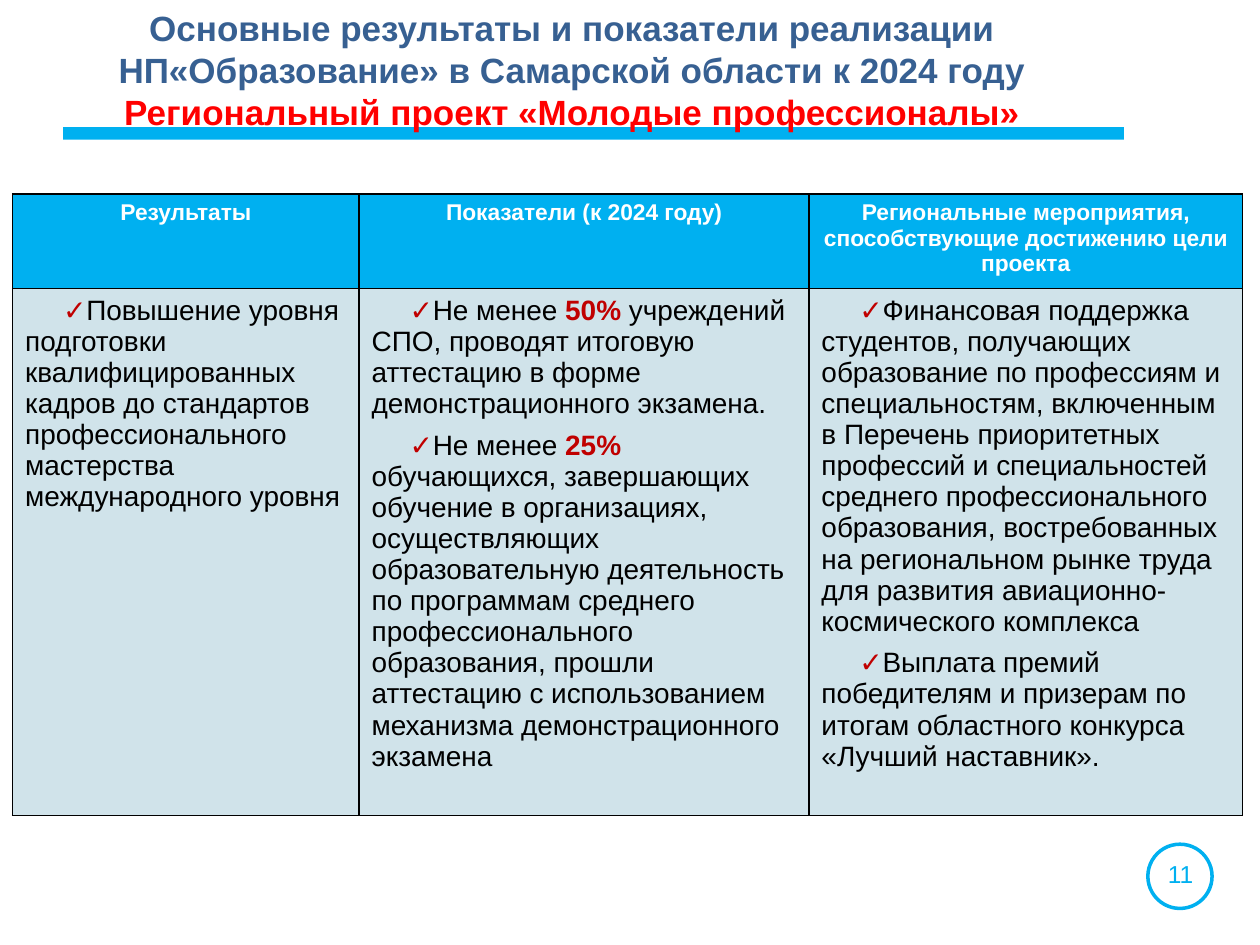
from dataclasses import dataclass

import pptx
import pptx.dml.color
import pptx.enum.shapes
import pptx.enum.text
import pptx.oxml.ns
import pptx.util
from lxml import etree

Inches = pptx.util.Inches
Pt = pptx.util.Pt
CENTER = pptx.enum.text.PP_ALIGN.CENTER
FONT = "Arial"
COLORS = {
    "sky": "00B0F0",
    "navy": "376092",
    "red": "FF0000",
    "crimson": "C00000",
    "pale": "D0E3EA",
    "white": "FFFFFF",
    "black": "000000",
}


@dataclass
class Span:
    text: str
    size: int = 16
    color: str = "black"
    bold: bool = False


@dataclass
class Column:
    width: float
    heading: str
    items: list[list[Span]]


def rgb(name: str) -> pptx.dml.color.RGBColor:
    return pptx.dml.color.RGBColor.from_string(COLORS[name])


def add_spans(paragraph, spans: list[Span]) -> None:
    for span in spans:
        run = paragraph.add_run()
        run.text = span.text
        run.font.name = FONT
        run.font.size = Pt(span.size)
        run.font.bold = span.bold
        run.font.color.rgb = rgb(span.color)


def add_child(parent, tag: str, **attributes: str):
    return etree.SubElement(parent, pptx.oxml.ns.qn(tag), **attributes)


def add_check_bullet(paragraph) -> None:
    properties = paragraph._p.get_or_add_pPr()
    properties.set("marL", "0")
    properties.set("indent", str(Inches(0.3)))
    bullet_color = add_child(properties, "a:buClr")
    add_child(bullet_color, "a:srgbClr", val=COLORS["crimson"])
    add_child(properties, "a:buFont", typeface=FONT)
    add_child(properties, "a:buChar", char="✓")


def style_cell(cell, fill: str) -> None:
    properties = cell._tc.get_or_add_tcPr()
    for side in ("a:lnL", "a:lnR", "a:lnT", "a:lnB"):
        border = add_child(properties, side, w=str(Pt(1)))
        border_fill = add_child(border, "a:solidFill")
        add_child(border_fill, "a:srgbClr", val=COLORS["black"])
    cell.fill.solid()
    cell.fill.fore_color.rgb = rgb(fill)


def add_results_table(slide, columns: list[Column]) -> None:
    row_heights = (0.75, 4.18)
    results = slide.shapes.add_table(
        len(row_heights), len(columns), Inches(0.1), Inches(1.54),
        Inches(sum(column.width for column in columns)), Inches(sum(row_heights)),
    ).table
    results.first_row = False
    results.horz_banding = False
    for row, height in zip(results.rows, row_heights):
        row.height = Inches(height)
    for index, column in enumerate(columns):
        results.columns[index].width = Inches(column.width)
        heading, body = results.cell(0, index), results.cell(1, index)
        style_cell(heading, "sky")
        style_cell(body, "pale")
        heading_line = heading.text_frame.paragraphs[0]
        heading_line.alignment = CENTER
        add_spans(heading_line, [Span(column.heading, 13, "white", True)])
        for number, spans in enumerate(column.items):
            frame = body.text_frame
            item = frame.add_paragraph() if number else frame.paragraphs[0]
            add_check_bullet(item)
            item.space_before = Pt(6 if number else 0)
            add_spans(item, spans)


def add_title(slide) -> None:
    title = slide.shapes.title
    title.left, title.top = Inches(0), Inches(0)
    title.width, title.height = Inches(9.08), Inches(1.07)
    frame = title.text_frame
    frame.word_wrap = True
    frame.auto_size = pptx.enum.text.MSO_AUTO_SIZE.NONE
    frame.vertical_anchor = pptx.enum.text.MSO_ANCHOR.TOP
    lines = [
        Span("Основные результаты и показатели реализации НП«Образование» "
             "в Самарской области к 2024 году", 20, "navy", True),
        Span("Региональный проект «Молодые профессионалы»", 20, "red", True),
    ]
    for number, line in enumerate(lines):
        paragraph = frame.add_paragraph() if number else frame.paragraphs[0]
        paragraph.alignment = CENTER
        add_spans(paragraph, [line])
    slide.shapes._spTree.append(title._element)


def add_title_bar(slide) -> None:
    bar = slide.shapes.add_shape(
        pptx.enum.shapes.MSO_SHAPE.RECTANGLE,
        Inches(0.5), Inches(1.01), Inches(8.42), Inches(0.1),
    )
    bar.shadow.inherit = False
    bar.fill.solid()
    bar.fill.fore_color.rgb = rgb("sky")
    bar.line.fill.background()


def add_page_number(slide) -> None:
    ring = slide.shapes.add_shape(
        pptx.enum.shapes.MSO_SHAPE.OVAL,
        Inches(9.11), Inches(6.7), Inches(0.51), Inches(0.51),
    )
    ring.shadow.inherit = False
    ring.fill.background()
    ring.line.color.rgb = rgb("sky")
    ring.line.width = Pt(2)
    page = slide.shapes.add_textbox(
        Inches(9.08), Inches(6.77), Inches(0.58), Inches(0.34)
    )
    page.text_frame.word_wrap = True
    paragraph = page.text_frame.paragraphs[0]
    paragraph.alignment = CENTER
    add_spans(paragraph, [Span("11", 14, "sky")])


COLUMNS = [
    Column(2.75, "Результаты", [
        [Span("Повышение уровня подготовки квалифицированных кадров до стандартов "
              "профессионального мастерства международного уровня")],
    ]),
    Column(3.57, "Показатели (к 2024 году)", [
        [Span("Не менее "), Span("50%", color="crimson", bold=True),
         Span(" учреждений СПО, проводят итоговую аттестацию в форме "
              "демонстрационного экзамена.")],
        [Span("Не менее"), Span(" 25% ", color="crimson", bold=True),
         Span("обучающихся, завершающих обучение в организациях, осуществляющих "
              "образовательную деятельность по программам среднего "
              "профессионального образования, прошли аттестацию с использованием "
              "механизма демонстрационного экзамена")],
    ]),
    Column(3.44, "Региональные мероприятия, способствующие достижению цели проекта", [
        [Span("Финансовая поддержка студентов, получающих образование по профессиям "
              "и специальностям, включенным в Перечень приоритетных профессий и "
              "специальностей среднего профессионального образования, "
              "востребованных на региональном рынке труда для развития "
              "авиационно-космического комплекса")],
        [Span("Выплата премий победителям и призерам по итогам областного конкурса "
              "«Лучший наставник».")],
    ]),
]


def main() -> None:
    presentation = pptx.Presentation()
    presentation.slide_width = Inches(10)
    presentation.slide_height = Inches(7.5)
    slide = presentation.slides.add_slide(presentation.slide_layouts[5])
    add_title_bar(slide)
    add_page_number(slide)
    add_results_table(slide, COLUMNS)
    add_title(slide)
    presentation.save("out.pptx")


if __name__ == "__main__":
    main()
